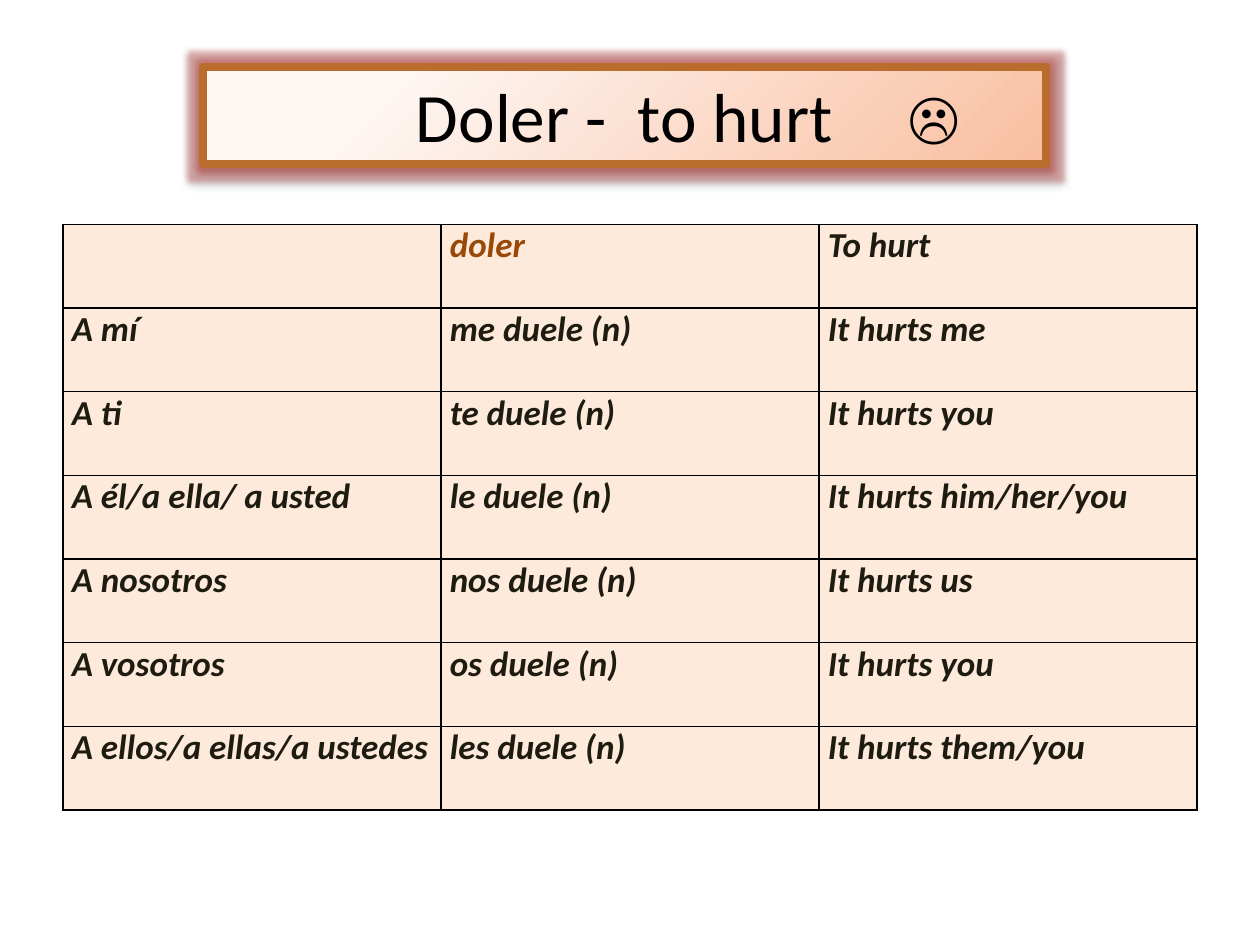
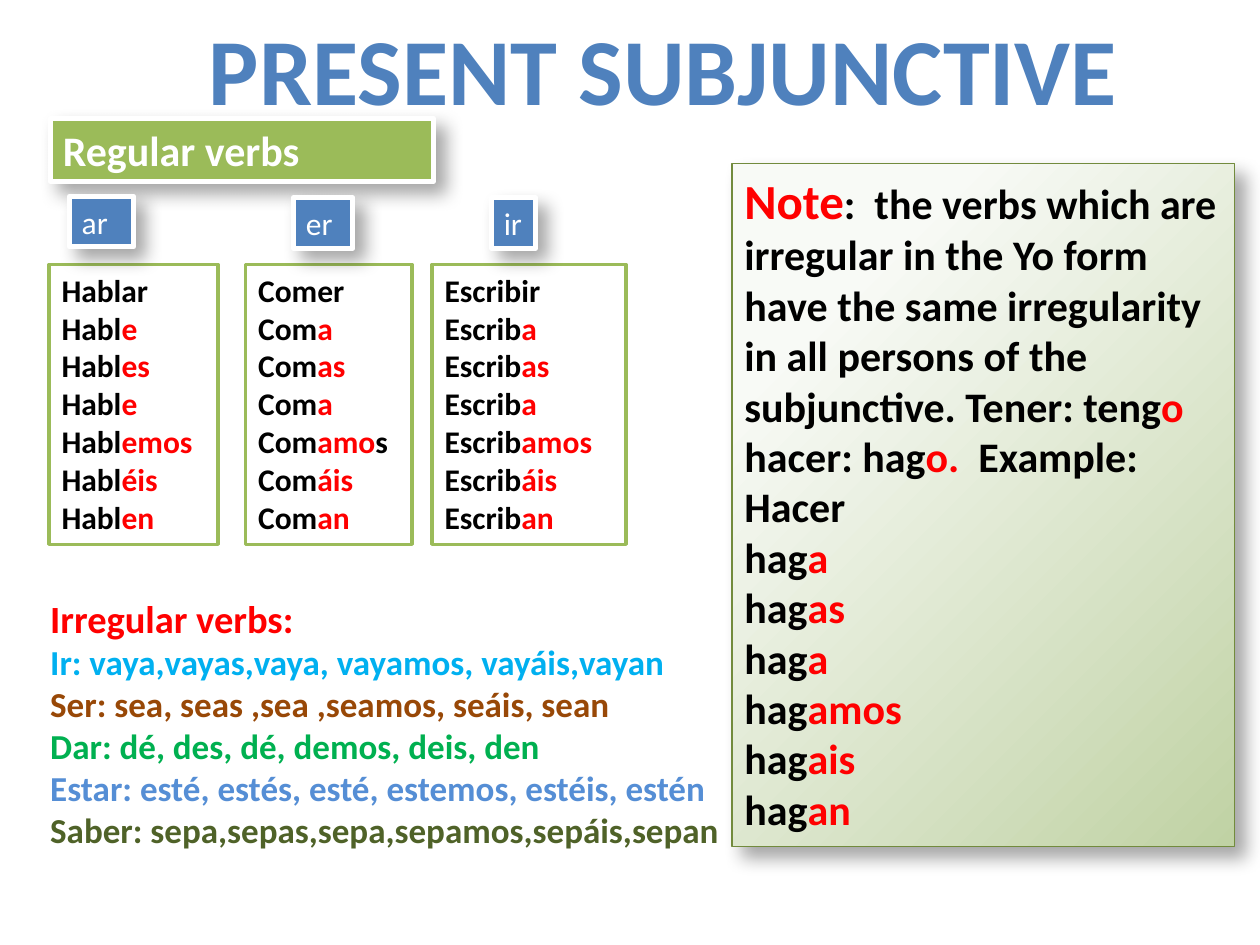
from dataclasses import dataclass

from lxml import etree
from pptx import Presentation
from pptx.dml.color import RGBColor
from pptx.enum.shapes import MSO_SHAPE
from pptx.enum.text import MSO_ANCHOR, MSO_AUTO_SIZE, PP_ALIGN
from pptx.oxml import parse_xml
from pptx.oxml.ns import nsdecls, qn
from pptx.util import Inches, Pt

RECTANGLE = MSO_SHAPE.RECTANGLE
TOP, MIDDLE = MSO_ANCHOR.TOP, MSO_ANCHOR.MIDDLE
LEFT, CENTER = PP_ALIGN.LEFT, PP_ALIGN.CENTER
GROW, FIXED = MSO_AUTO_SIZE.SHAPE_TO_FIT_TEXT, MSO_AUTO_SIZE.NONE

FONT = "Calibri"
COLORS = {
    "black": "000000", "white": "FFFFFF", "red": "FF0000", "blue": "4F81BD",
    "green": "9BBB59", "dark green": "728B3D", "orange": "BA6C2C",
    "brown": "984807", "ink": "1E1C11", "peach": "FDEADA", "glow": "C0504D",
    "sky": "00B0F0", "emerald": "00B050", "soft blue": "558ED5", "olive": "4F6228",
    "peach light": "FEF8F5", "peach deep": "F9BE9F",
    "sage light": "F8FAF6", "sage deep": "C0D2A4",
}


@dataclass(frozen=True)
class Run:
    text: str
    color: str = "black"
    size: float | None = None


@dataclass(frozen=True)
class Shadow:
    opacity: int
    blur: float
    distance: float
    angle: int
    glow: float = 0


@dataclass(frozen=True)
class Box:
    left: float
    top: float
    width: float
    height: float
    fill: str | tuple[str, str] | None = None
    line: str | None = None
    line_width: float = 0
    shadow: Shadow | None = None


@dataclass(frozen=True)
class VerbGroup:
    ending: str
    tag: Box
    panel: Box
    forms: str


TITLE_SHADOW = Shadow(38, 3.1, 1.6, 90, glow=5)
CARD_SHADOW = Shadow(35, 10.2, 8, 45)

DOLER_ROWS = [
    ("", "doler", "To hurt"),
    ("A mí", "me duele (n)", "It hurts me"),
    ("A ti", "te duele (n)", "It hurts you"),
    ("A él/a ella/ a usted", "le duele (n)", "It hurts him/her/you"),
    ("A nosotros", "nos duele (n)", "It hurts us"),
    ("A vosotros", "os duele (n)", "It hurts you"),
    ("A ellos/a ellas/a ustedes", "les duele (n)", "It hurts them/you"),
]


def verb_tag(left: float, top: float, width: float) -> Box:
    return Box(left, top, width, 0.4, "blue", "white", 3, CARD_SHADOW)


def verb_panel(left: float, width: float) -> Box:
    return Box(left, 2.1, width, 2.22, "white", "green", 2)


# A bar switches between the stem and the highlighted ending.
VERB_GROUPS = [
    VerbGroup("ar", verb_tag(0.55, 1.56, 0.51), verb_panel(0.39, 1.34),
              "Hablar Habl|e Habl|es Habl|e Habl|emos Habl|éis Habl|en"),
    VerbGroup("er", verb_tag(2.33, 1.57, 0.47), verb_panel(1.95, 1.32),
              "Comer Com|a Com|as Com|a Com|amo|s Com|áis Com|an"),
    VerbGroup("ir", verb_tag(3.9, 1.57, 0.35), verb_panel(3.43, 1.54),
              "Escribir Escrib|a Escrib|as Escrib|a Escrib|amos Escrib|áis Escrib|an"),
]

IRREGULAR_VERBS = [
    Run("Irregular verbs:", "red", 22),
    Run("Ir: vaya,vayas,vaya, vayamos, vayáis,vayan", "sky"),
    Run("Ser: sea, seas ,sea ,seamos, seáis, sean", "brown"),
    Run("Dar: dé, des, dé, demos, deis, den", "emerald"),
    Run("Estar: esté, estés, esté, estemos, estéis, estén", "soft blue"),
    Run("Saber: sepa,sepas,sepa,sepamos,sepáis,sepan", "olive"),
]

NOTE_RULE = (":  the verbs which are irregular in the Yo form have the same irregularity "
             "in all persons of the subjunctive. Tener: teng|o")
NOTE_EXAMPLE = ["hacer: hag|o.  |Example:", "Hacer",
                *"hag|a hag|as hag|a hag|amos hag|ais hag|an".split()]


def rgb(name: str) -> RGBColor:
    return RGBColor.from_string(COLORS[name])


def accented(text: str) -> list[Run]:
    """Split at bars; every second part is red."""
    return [Run(part, ("black", "red")[i % 2]) for i, part in enumerate(text.split("|"))]


def write_text(frame, paragraphs: list[list[Run]], *, size: float, bold: bool = False,
               italic: bool = False, align=LEFT) -> None:
    for i, runs in enumerate(paragraphs):
        paragraph = frame.add_paragraph() if i else frame.paragraphs[0]
        paragraph.alignment = align
        for item in runs:
            run = paragraph.add_run()
            run.text = item.text
            font = run.font
            font.name, font.size = FONT, Pt(item.size or size)
            font.bold, font.italic = bold, italic
            font.color.rgb = rgb(item.color)


def color_xml(name: str, opacity: int = 100) -> str:
    return f'<a:srgbClr val="{COLORS[name]}"><a:alpha val="{opacity * 1000}"/></a:srgbClr>'


def corner_gradient(inner: str, outer: str):
    """Circular gradient that starts beyond the top left corner."""
    return parse_xml(
        f'<a:gradFill {nsdecls("a")} rotWithShape="1"><a:gsLst>'
        f'<a:gs pos="20000">{color_xml(inner)}</a:gs>'
        f'<a:gs pos="100000">{color_xml(outer)}</a:gs></a:gsLst>'
        '<a:path path="circle">'
        '<a:fillToRect l="-15000" t="-15000" r="115000" b="115000"/>'
        '</a:path></a:gradFill>')


def add_shadow(shape, shadow: Shadow) -> None:
    effects = shape._element.spPr.find(qn("a:effectLst"))
    if shadow.glow:
        effects.append(parse_xml(
            f'<a:glow {nsdecls("a")} rad="{Pt(shadow.glow)}">'
            f'{color_xml("glow", 40)}</a:glow>'))
    outer = etree.SubElement(
        effects, qn("a:outerShdw"), blurRad=str(Pt(shadow.blur)),
        dist=str(Pt(shadow.distance)), dir=str(shadow.angle * 60000),
        algn="tl", rotWithShape="0")
    color = etree.SubElement(outer, qn("a:srgbClr"), val=COLORS["black"])
    etree.SubElement(color, qn("a:alpha"), val=str(shadow.opacity * 1000))


def add_box(slide, box: Box, paragraphs: list[list[Run]], *, wrap: bool = True,
            grow: bool = True, anchor=TOP, **text_format) -> None:
    place = [Inches(v) for v in (box.left, box.top, box.width, box.height)]
    if box.fill is None:
        shape = slide.shapes.add_textbox(*place)
    else:
        shape = slide.shapes.add_shape(RECTANGLE, *place)
        shape.shadow.inherit = False
        if isinstance(box.fill, tuple):
            shape._element.spPr.find(qn("a:prstGeom")).addnext(corner_gradient(*box.fill))
        else:
            shape.fill.solid()
            shape.fill.fore_color.rgb = rgb(box.fill)
        shape.line.color.rgb = rgb(box.line)
        shape.line.width = Pt(box.line_width)
        if box.shadow:
            add_shadow(shape, box.shadow)
    frame = shape.text_frame
    frame.word_wrap = wrap
    frame.auto_size = GROW if grow else FIXED
    frame.vertical_anchor = anchor
    write_text(frame, paragraphs, **text_format)


def add_cell_borders(cell) -> None:
    properties = cell._tc.get_or_add_tcPr()
    for i, side in enumerate(("lnL", "lnR", "lnT", "lnB")):
        properties.insert(i, parse_xml(
            f'<a:{side} {nsdecls("a")} w="{Pt(1)}"><a:solidFill>'
            f'{color_xml("black")}</a:solidFill></a:{side}>'))


def add_doler_table(slide) -> None:
    row_count, column_count = len(DOLER_ROWS), len(DOLER_ROWS[0])
    table = slide.shapes.add_table(row_count, column_count, Inches(0.5), Inches(1.78),
                                   Inches(9), Inches(4.65)).table
    table.first_row = table.horz_banding = False
    for r, row in enumerate(DOLER_ROWS):
        for c, text in enumerate(row):
            cell = table.cell(r, c)
            cell.fill.solid()
            cell.fill.fore_color.rgb = rgb("peach")
            cell.margin_left = cell.margin_right = Inches(0.07)
            cell.margin_top = cell.margin_bottom = 0
            add_cell_borders(cell)
            if text:
                color = "brown" if text == "doler" else "ink"
                write_text(cell.text_frame, [[Run(text, color)]],
                           size=20, bold=True, italic=True)


def build_doler(slide) -> None:
    title = Box(1.61, 0.53, 6.69, 0.77, ("peach light", "peach deep"),
                "orange", 4.5, TITLE_SHADOW)
    add_box(slide, title, [[Run("Doler -  to hurt")]], grow=False, anchor=MIDDLE,
            size=39.6, align=CENTER)
    add_doler_table(slide)
    add_box(slide, Box(7.11, 0.6, 0.79, 0.64), [[Run("☹")]], size=32)


def build_subjunctive(slide) -> None:
    for group in VERB_GROUPS:
        add_box(slide, group.panel, [accented(form) for form in group.forms.split()],
                size=18, bold=True)
    note = Box(5.81, 1.3, 3.99, 5.42, ("sage light", "sage deep"),
               "dark green", 0.75, CARD_SHADOW)
    add_box(slide, note,
            [[Run("Note", "red", 28), *accented(NOTE_RULE)], *map(accented, NOTE_EXAMPLE)],
            size=24, bold=True)
    add_box(slide, Box(0.4, 0.94, 3.04, 0.5, "green", "white", 3, CARD_SHADOW),
            [[Run("Regular verbs", "white")]], size=24, bold=True)
    add_box(slide, Box(0.3, 4.67, 5.51, 2.15), [[verb] for verb in IRREGULAR_VERBS],
            size=20, bold=True)
    add_box(slide, Box(1.52, 0.04, 7.49, 1.01), [[Run("PRESENT SUBJUNCTIVE", "blue")]],
            wrap=False, size=54, bold=True, align=CENTER)
    for group in VERB_GROUPS:
        add_box(slide, group.tag, [[Run(group.ending, "white")]],
                wrap=group.ending != "ir", size=18)


def main() -> None:
    deck = Presentation()
    deck.slide_width, deck.slide_height = Inches(10), Inches(7.5)
    for build in (build_doler, build_subjunctive):
        build(deck.slides.add_slide(deck.slide_layouts[6]))
    deck.save("out.pptx")


if __name__ == "__main__":
    main()
